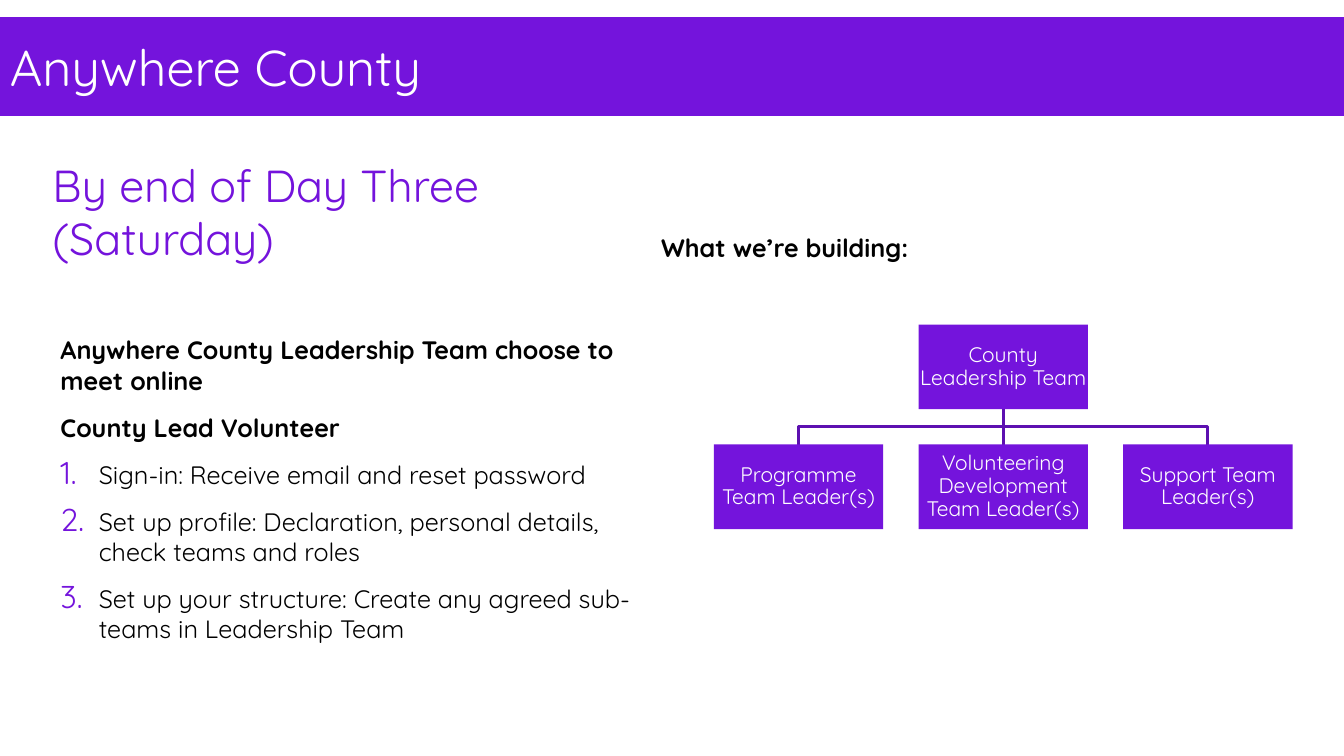
from lxml.etree import SubElement
from pptx import Presentation
from pptx.dml.color import RGBColor
from pptx.enum.shapes import MSO_CONNECTOR, MSO_SHAPE
from pptx.enum.text import MSO_ANCHOR, PP_ALIGN
from pptx.oxml.ns import qn
from pptx.util import Inches, Pt

PURPLE = RGBColor(0x74, 0x14, 0xDC)
TITLE = RGBColor(0x74, 0x13, 0xDC)
LINE = RGBColor(0x5D, 0x10, 0xB0)
BLACK = RGBColor(0, 0, 0)
WHITE = RGBColor(255, 255, 255)
FONT = "Quicksand"

BOX_W, BOX_H = 1.68, 0.84
TOP_Y, LOW_Y, MID_Y = 3.22, 4.41, 4.23
LEFT, STEP = 7.08, 2.03
LEADERS = [
    "Programme Team Leader(s)",
    "Volunteering Development Team Leader(s)",
    "Support Team Leader(s)",
]
HEADS = [
    "Anywhere County Leadership Team choose to meet online",
    "County Lead Volunteer",
]
STEPS = [
    "Sign-in: Receive email and reset password",
    "Set up profile: Declaration, personal details, check teams and roles",
    "Set up your structure: Create any agreed sub-teams in Leadership Team",
]


def style(para, size, color, bold=False):
    for run in para.runs:
        font = run.font
        font.name, font.size, font.bold = FONT, Pt(size), bold
        font.color.rgb = color


def set_margins(frame, side, top):
    frame.margin_left = frame.margin_right = Inches(side)
    frame.margin_top = frame.margin_bottom = Inches(top)


def indent(para, left, hang):
    props = para._p.get_or_add_pPr()
    props.set("marL", str(Inches(left)))
    props.set("indent", str(Inches(hang)))
    return props


def number(para):
    """Give the paragraph a large purple automatic number."""
    props = indent(para, 0.39, -0.38)
    color = SubElement(props, qn("a:buClr"))
    SubElement(color, qn("a:srgbClr"), val=str(PURPLE))
    SubElement(props, qn("a:buSzPct"), val="125000")
    SubElement(props, qn("a:buAutoNum"), type="arabicPeriod")


def add_text(slide, x, y, w, h, side=0.1, top=0.05):
    box = slide.shapes.add_textbox(Inches(x), Inches(y), Inches(w), Inches(h))
    frame = box.text_frame
    frame.word_wrap = True
    set_margins(frame, side, top)
    return frame


def add_title(slide):
    frame = add_text(slide, 0.52, 1.56, 5.93, 1.08, 0, 0)
    frame.text = "By end of Day Three (Saturday)"
    style(frame.paragraphs[0], 32, TITLE)


def add_steps(slide):
    frame = add_text(slide, 0.52, 3.28, 5.93, 3.17, 0.07, 0.04)
    frame.text = "\n".join(HEADS + STEPS)
    for i, para in enumerate(frame.paragraphs):
        is_head = i < len(HEADS)
        if is_head:
            indent(para, 0.01, 0)
        else:
            number(para)
        para.space_before = Pt(6 if i else 0)
        para.space_after = Pt(6)
        style(para, 18, BLACK, is_head)


def add_label(slide):
    frame = add_text(slide, 6.45, 2.26, 3.1, 0.4)
    frame.text = "What we’re building:"
    para = frame.paragraphs[0]
    indent(para, 0.01, 0)
    style(para, 18, BLACK, True)


def add_block(slide, text, x, y, w, h, size):
    shape = slide.shapes.add_shape(
        MSO_SHAPE.RECTANGLE, Inches(x), Inches(y), Inches(w), Inches(h))
    shape.shadow.inherit = False
    shape.fill.solid()
    shape.fill.fore_color.rgb = PURPLE
    shape.line.fill.background()
    frame = shape.text_frame
    frame.word_wrap = True
    frame.vertical_anchor = MSO_ANCHOR.MIDDLE
    frame.text = text
    para = frame.paragraphs[0]
    para.alignment = PP_ALIGN.LEFT
    style(para, size, WHITE)
    return frame


def add_team(slide, text, x, y):
    frame = add_block(slide, text, x, y, BOX_W, BOX_H, 15)
    set_margins(frame, 0.01, 0.01)
    para = frame.paragraphs[0]
    para.alignment = PP_ALIGN.CENTER
    para.line_spacing = 0.9


def set_line(shape):
    shape.line.color.rgb = LINE
    shape.line.width = Pt(2)


def add_branch(slide, start, end):
    """Draw an elbow from the top team down to an outer team."""
    points = [(start, TOP_Y + BOX_H), (start, MID_Y), (end, MID_Y), (end, LOW_Y)]
    points = [(Inches(x), Inches(y)) for x, y in points]
    form = slide.shapes.build_freeform(*points[0])
    form.add_line_segments(points[1:], close=False)
    shape = form.convert_to_shape()
    shape.shadow.inherit = False
    shape.fill.background()
    set_line(shape)


def add_stem(slide, x):
    stem = slide.shapes.add_connector(
        MSO_CONNECTOR.STRAIGHT,
        Inches(x), Inches(TOP_Y + BOX_H), Inches(x), Inches(LOW_Y))
    set_line(stem)
    SubElement(stem._element.spPr, qn("a:effectLst"))


def add_chart(slide):
    mid = LEFT + STEP + BOX_W / 2
    add_branch(slide, mid, mid + STEP)
    add_stem(slide, mid)
    add_branch(slide, mid, mid - STEP)
    add_team(slide, "County Leadership Team", LEFT + STEP, TOP_Y)
    for i, text in enumerate(LEADERS):
        add_team(slide, text, LEFT + i * STEP, LOW_Y)


def main():
    deck = Presentation()
    deck.slide_width, deck.slide_height = Inches(13.33), Inches(7.5)
    slide = deck.slides.add_slide(deck.slide_layouts[6])
    add_title(slide)
    add_steps(slide)
    add_chart(slide)
    add_label(slide)
    add_block(slide, "Anywhere County", 0, 0.17, 13.33, 0.98, 36)
    deck.save("out.pptx")


if __name__ == "__main__":
    main()
